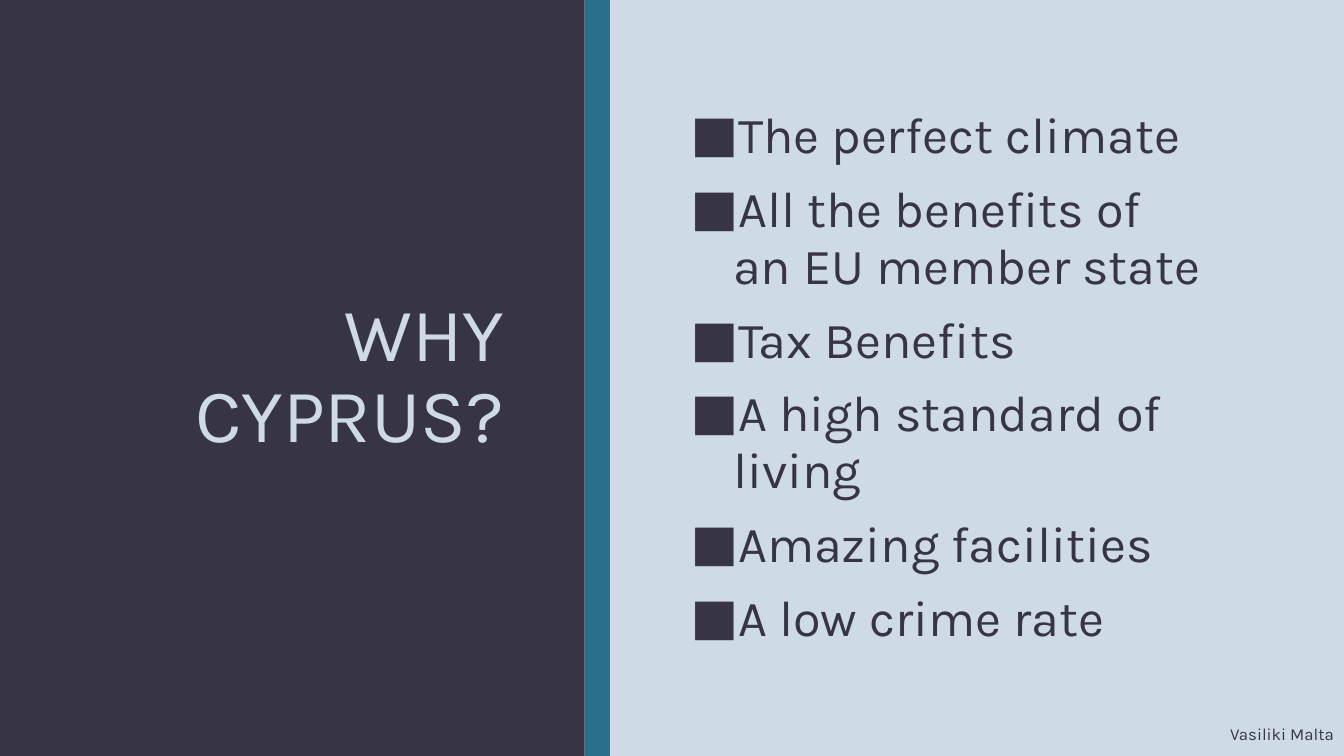
from pptx import Presentation, util as u
from pptx.dml.color import RGBColor
from pptx.enum import shapes, text
from pptx.oxml import parse_xml
from pptx.oxml.ns import nsdecls

# Content
TITLE = "WHY CYPRUS?"
REASONS = [
    "The perfect climate",
    "All the benefits of an EU member state",
    "Tax Benefits",
    "A high standard of living",
    "Amazing facilities",
    "A low crime rate",
]
PRESENTER = "Vasiliki Malta"

# Style and layout, in inches
COLORS = {"dark": "373545", "light": "CEDBE6", "accent": "276F8B"}
FONT = "Karla"
WIDTH, HEIGHT = 13.33, 7.5
PANEL, STRIPE = 5.8, 0.25
TOP, BODY_HEIGHT = 0.87, 5.76
INDENT = 0.42
PANELS = [(0, PANEL, "dark"), (PANEL, STRIPE, "accent")]


def write(box, lines, place, size, color, align=text.PP_ALIGN.LEFT,
          line_spacing=1.0, before=0, after=0, bullet=None):
    """Place a box and fill it with one paragraph per line."""
    box.left, box.top, box.width, box.height = map(u.Inches, place)
    frame = box.text_frame
    frame.word_wrap = True
    frame.auto_size = text.MSO_AUTO_SIZE.NONE
    frame.vertical_anchor = text.MSO_ANCHOR.MIDDLE
    for number, line in enumerate(lines):
        para = frame.add_paragraph() if number else frame.paragraphs[0]
        para.alignment = align
        para.line_spacing = line_spacing
        para.space_before, para.space_after = u.Pt(before), u.Pt(after)
        span = para.add_run()
        span.text = line
        span.font.name, span.font.size = FONT, u.Pt(size)
        span.font.color.rgb = RGBColor.from_string(COLORS[color])
        if bullet:
            props = para._p.get_or_add_pPr()
            props.set("marL", str(u.Inches(INDENT)))
            props.set("indent", str(-u.Inches(INDENT)))
            props.append(parse_xml(f'<a:buFont {nsdecls("a")} typeface="{FONT}"/>'))
            props.append(parse_xml(f'<a:buChar {nsdecls("a")} char="{bullet}"/>'))


deck = Presentation()
deck.slide_width, deck.slide_height = u.Inches(WIDTH), u.Inches(HEIGHT)
page = deck.slides.add_slide(deck.slide_layouts[1])
page.background.fill.solid()
page.background.fill.fore_color.rgb = RGBColor.from_string(COLORS["light"])
title, body = page.placeholders

# Left panel and stripe
for left, width, color in PANELS:
    panel = page.shapes.add_shape(shapes.MSO_SHAPE.RECTANGLE, u.Inches(left), 0,
                                  u.Inches(width), deck.slide_height)
    panel.shadow.inherit = False
    panel.fill.solid()
    panel.fill.fore_color.rgb = RGBColor.from_string(COLORS[color])
    panel.line.fill.background()

# Bring the placeholders in front of the panels
for holder in (title, body):
    holder._element.getparent().append(holder._element)

# Title, reasons and presenter
write(title, [TITLE], (0.7, TOP, 4.4, BODY_HEIGHT), 54, "light",
      align=text.PP_ALIGN.RIGHT, line_spacing=0.89)
write(body, REASONS, (6.75, TOP, 5.35, BODY_HEIGHT), 36, "dark",
      line_spacing=0.94, before=10, after=2, bullet="■")
presenter = page.shapes.add_textbox(0, 0, 0, 0)
write(presenter, [PRESENTER], (2.83, 7.06, WIDTH - 2.83, 0.44), 12, "dark",
      align=text.PP_ALIGN.RIGHT)

deck.save("out.pptx")
